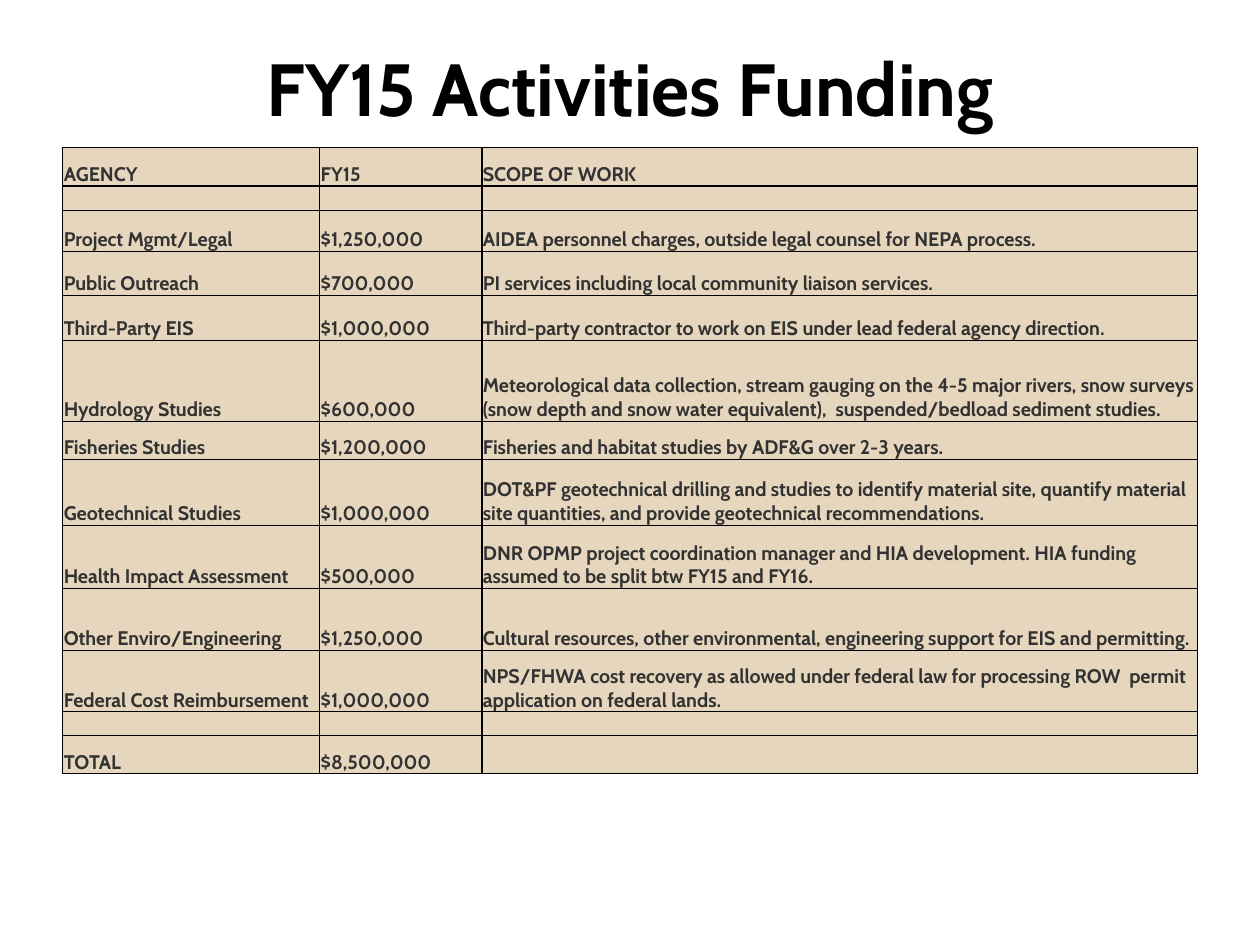
import pptx
import pptx.dml.color
import pptx.enum.text
import pptx.oxml
import pptx.oxml.ns
import pptx.util
from pptx.util import Inches

COLORS = {"title": "000000", "text": "323232", "cell": "E6D6BD", "border": "000000"}
FONT = "Cabin"
TEXT_SIZE = 16
LEFT, WIDTH = 0.71, 12.8
COLUMN_WIDTHS = [2.9, 1.83, 8.07]
FUNDING_ROWS = [
    (0.43, "AGENCY", "FY15", "SCOPE OF WORK"),
    (0.28, "", "", ""),
    (0.46, "Project Mgmt/Legal", "$1,250,000",
     "AIDEA personnel charges, outside legal counsel for NEPA process."),
    (0.5, "Public Outreach", "$700,000",
     "PI services including local community liaison services."),
    (0.5, "Third-Party EIS", "$1,000,000",
     "Third-party contractor to work on EIS under lead federal agency direction."),
    (0.92, "Hydrology Studies", "$600,000",
     "Meteorological data collection, stream gauging on the 4-5 major rivers, snow surveys "
     "(snow depth and snow water equivalent),  suspended/bedload sediment studies."),
    (0.43, "Fisheries Studies", "$1,200,000",
     "Fisheries and habitat studies by ADF&G over 2-3 years."),
    (0.74, "Geotechnical Studies", "$1,000,000",
     "DOT&PF geotechnical drilling and studies to identify material site, quantify material "
     "site quantities, and provide geotechnical recommendations."),
    (0.72, "Health Impact Assessment", "$500,000",
     "DNR OPMP project coordination manager and HIA development. HIA funding "
     "assumed to be split btw FY15 and FY16."),
    (0.7, "Other Enviro/Engineering", "$1,250,000",
     "Cultural resources, other environmental, engineering support for EIS and permitting."),
    (0.69, "Federal Cost Reimbursement", "$1,000,000",
     "NPS/FHWA cost recovery as allowed under federal law for processing ROW  permit "
     "application on federal lands."),
    (0.27, "", "", ""),
    (0.43, "TOTAL", "$8,500,000", ""),
]


def rgb(name):
    return pptx.dml.color.RGBColor.from_string(COLORS[name])


def set_text(text_frame, text, size, color):
    text_frame.text = text
    paragraph = text_frame.paragraphs[0]
    for run in paragraph.runs:
        run.font.name = FONT
        run.font.size = pptx.util.Pt(size)
        run.font.bold = True
        run.font.color.rgb = rgb(color)
    return paragraph


def add_title(slide, text):
    title = slide.shapes.title
    title.left, title.top = Inches(LEFT), Inches(0.43)
    title.width, title.height = Inches(WIDTH), Inches(1.16)
    text_frame = title.text_frame
    text_frame.auto_size = pptx.enum.text.MSO_AUTO_SIZE.NONE
    text_frame.vertical_anchor = pptx.enum.text.MSO_ANCHOR.TOP
    paragraph = set_text(text_frame, text, 60, "title")
    paragraph.alignment = pptx.enum.text.PP_ALIGN.CENTER


def set_borders(cell):
    properties = cell._tc.get_or_add_tcPr()
    for index, side in enumerate(("lnL", "lnR", "lnT", "lnB")):
        border = pptx.oxml.parse_xml(
            f'<a:{side} {pptx.oxml.ns.nsdecls("a")} w="12700"><a:solidFill>'
            f'<a:srgbClr val="{COLORS["border"]}"/></a:solidFill></a:{side}>')
        properties.insert(index, border)


def set_empty_size(paragraph, size):
    paragraph._p.append(pptx.oxml.parse_xml(
        f'<a:endParaRPr {pptx.oxml.ns.nsdecls("a")} sz="{size * 100}"/>'))


def fill_cell(cell, text):
    cell.fill.solid()
    cell.fill.fore_color.rgb = rgb("cell")
    set_borders(cell)
    cell.margin_left = cell.margin_right = cell.margin_top = Inches(0.01)
    cell.margin_bottom = 0
    cell.vertical_anchor = pptx.enum.text.MSO_ANCHOR.BOTTOM
    if text:
        set_text(cell.text_frame, text, TEXT_SIZE, "text")
    else:
        set_empty_size(cell.text_frame.paragraphs[0], 12)


def add_funding_table(slide):
    height = sum(row[0] for row in FUNDING_ROWS)
    table = slide.shapes.add_table(
        len(FUNDING_ROWS), len(COLUMN_WIDTHS),
        Inches(LEFT), Inches(1.67), Inches(WIDTH), Inches(height)).table
    table.first_row = False
    table.horz_banding = False
    for column, width in zip(table.columns, COLUMN_WIDTHS):
        column.width = Inches(width)
    for row, (row_height, *texts) in zip(table.rows, FUNDING_ROWS):
        row.height = Inches(row_height)
        for cell, text in zip(row.cells, texts):
            fill_cell(cell, text)


def main():
    presentation = pptx.Presentation()
    presentation.slide_width = Inches(14.22)
    presentation.slide_height = Inches(10.67)
    slide = presentation.slides.add_slide(presentation.slide_layouts[5])
    add_title(slide, "FY15 Activities Funding")
    add_funding_table(slide)
    presentation.save("out.pptx")


if __name__ == "__main__":
    main()
